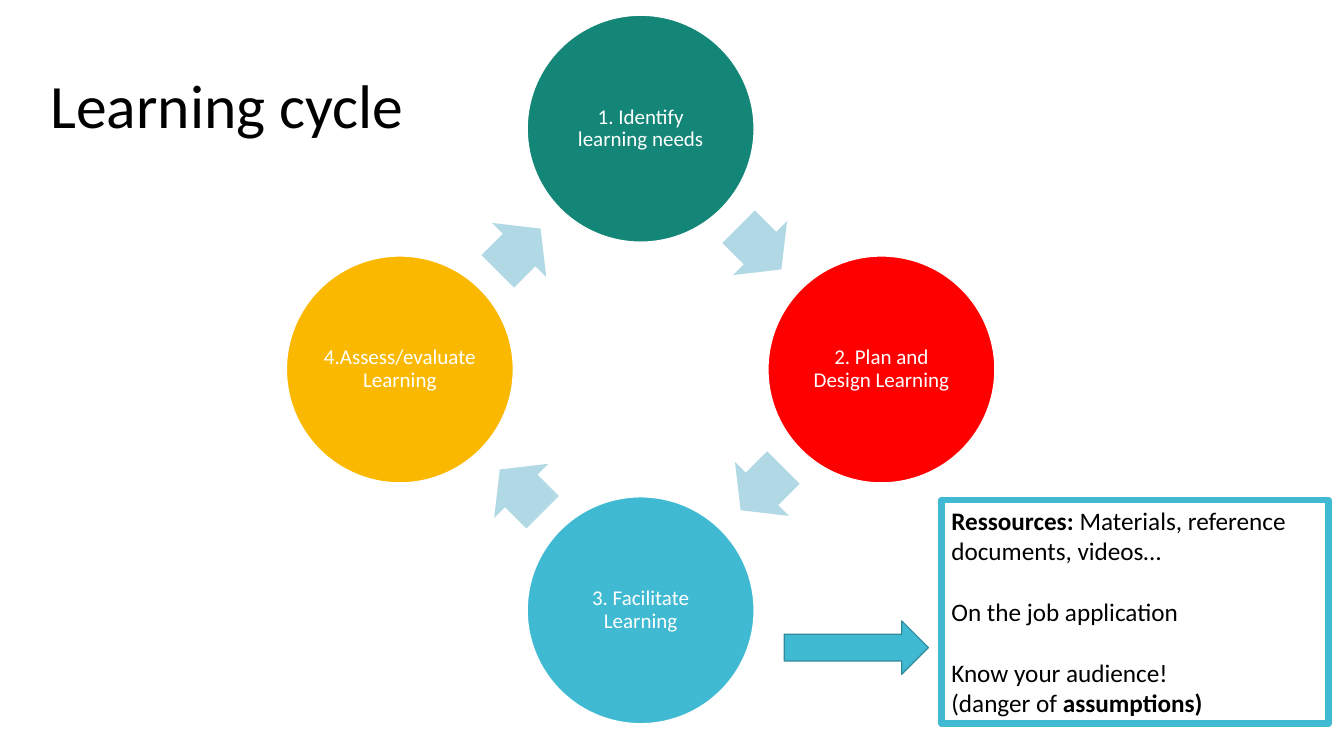
import math
from pptx import Presentation
from pptx import util as u
from pptx.dml.color import RGBColor
from pptx.enum import shapes, text

TITLE = "Learning cycle"
STEPS = [  # clockwise from the top
    ("1. Identify learning needs", "138677"),
    ("2. Plan and Design Learning", "FF0000"),
    ("3. Facilitate Learning", "40BAD2"),
    ("4.Assess/evaluate Learning", "FAB900"),
]
RESOURCES = [  # (space before, runs of (text, bold))
    (0, [("Ressources: ", True), ("Materials, reference documents, videos…", False)]),
    (22, [("On the job application", False)]),
    (22, [("Know your audience!", False)]),
    (0, [("(danger of ", False), ("assumptions)", True)]),
]
FONT, BLACK, WHITE = "Calibri", "000000", "FFFFFF"
TEAL, PALE_BLUE, ARROW_EDGE = "40BAD2", "B0D9E5", "2F8A9B"

# Cycle geometry in points
CENTER_X, CENTER_Y, RADIUS = 457.6, 263.9, 172
DIAMETER = 162
ARROW_W, ARROW_H, ARROW_BACK = 43.2, 54.7, 1

deck = Presentation()
deck.slide_width, deck.slide_height = u.Pt(960), u.Pt(540)
page = deck.slides.add_slide(deck.slide_layouts[5])


def color(hex_text):
    return RGBColor.from_string(hex_text)


def add_box(kind, left, top, width, height, fill=None, line=None, weight=0.85):
    box = page.shapes.add_shape(kind, u.Pt(left), u.Pt(top), u.Pt(width), u.Pt(height))
    box.shadow.inherit = False
    if fill:
        box.fill.solid()
        box.fill.fore_color.rgb = color(fill)
    else:
        box.fill.background()
    if line:
        box.line.color.rgb = color(line)
        box.line.width = u.Pt(weight)
    else:
        box.line.fill.background()
    return box


def add_span(para, words, size, ink, bold=False):
    span = para.add_run()
    span.text = words
    span.font.name, span.font.size, span.font.bold = FONT, u.Pt(size), bold
    span.font.color.rgb = color(ink)


# Title
title = page.shapes.title
title.left, title.top, title.width, title.height = u.Pt(28.8), u.Pt(43.9), u.Pt(278.6), u.Pt(60.5)
title.text_frame.auto_size = text.MSO_AUTO_SIZE.NONE
title.text_frame.vertical_anchor = text.MSO_ANCHOR.TOP
title_para = title.text_frame.paragraphs[0]
title_para.alignment = text.PP_ALIGN.LEFT
add_span(title_para, TITLE, 44, BLACK)

# Circles, each followed by the arrow to the next step
for index, (label, fill) in enumerate(STEPS):
    angle = math.radians(index * 90)
    x = CENTER_X + RADIUS * math.sin(angle)
    y = CENTER_Y - RADIUS * math.cos(angle)
    circle = add_box(shapes.MSO_SHAPE.OVAL, x - DIAMETER / 2, y - DIAMETER / 2,
                     DIAMETER, DIAMETER, fill, WHITE)
    frame = circle.text_frame
    frame.word_wrap = True
    frame.vertical_anchor = text.MSO_ANCHOR.MIDDLE
    frame.margin_left = frame.margin_right = frame.margin_top = frame.margin_bottom = u.Pt(1.5)
    para = frame.paragraphs[0]
    para.alignment = text.PP_ALIGN.CENTER
    para.line_spacing = 0.9
    add_span(para, label, 15, WHITE)

    middle = angle + math.pi / 4
    reach = RADIUS * math.cos(math.pi / 4)
    x = CENTER_X + reach * math.sin(middle) - ARROW_BACK * math.cos(middle)
    y = CENTER_Y - reach * math.cos(middle) - ARROW_BACK * math.sin(middle)
    arrow = add_box(shapes.MSO_SHAPE.RIGHT_ARROW, x - ARROW_W / 2, y - ARROW_H / 2,
                    ARROW_W, ARROW_H, PALE_BLUE)
    arrow.adjustments[0], arrow.adjustments[1] = 0.6, 0.5
    arrow.rotation = 45 + index * 90

# Resources box
resources = add_box(shapes.MSO_SHAPE.RECTANGLE, 672.5, 357.1, 276.5, 159.8, None, TEAL, 4.5)
frame = resources.text_frame
frame.word_wrap = True
frame.vertical_anchor = text.MSO_ANCHOR.TOP
for index, (gap, spans) in enumerate(RESOURCES):
    para = frame.add_paragraph() if index else frame.paragraphs[0]
    para.alignment = text.PP_ALIGN.LEFT
    if gap:
        para.space_before = u.Pt(gap)
    for words, bold in spans:
        add_span(para, words, 18, BLACK, bold)

# Arrow from step 3 to the resources
add_box(shapes.MSO_SHAPE.RIGHT_ARROW, 560.2, 443.5, 103, 38.2, TEAL, ARROW_EDGE)

deck.save("out.pptx")
